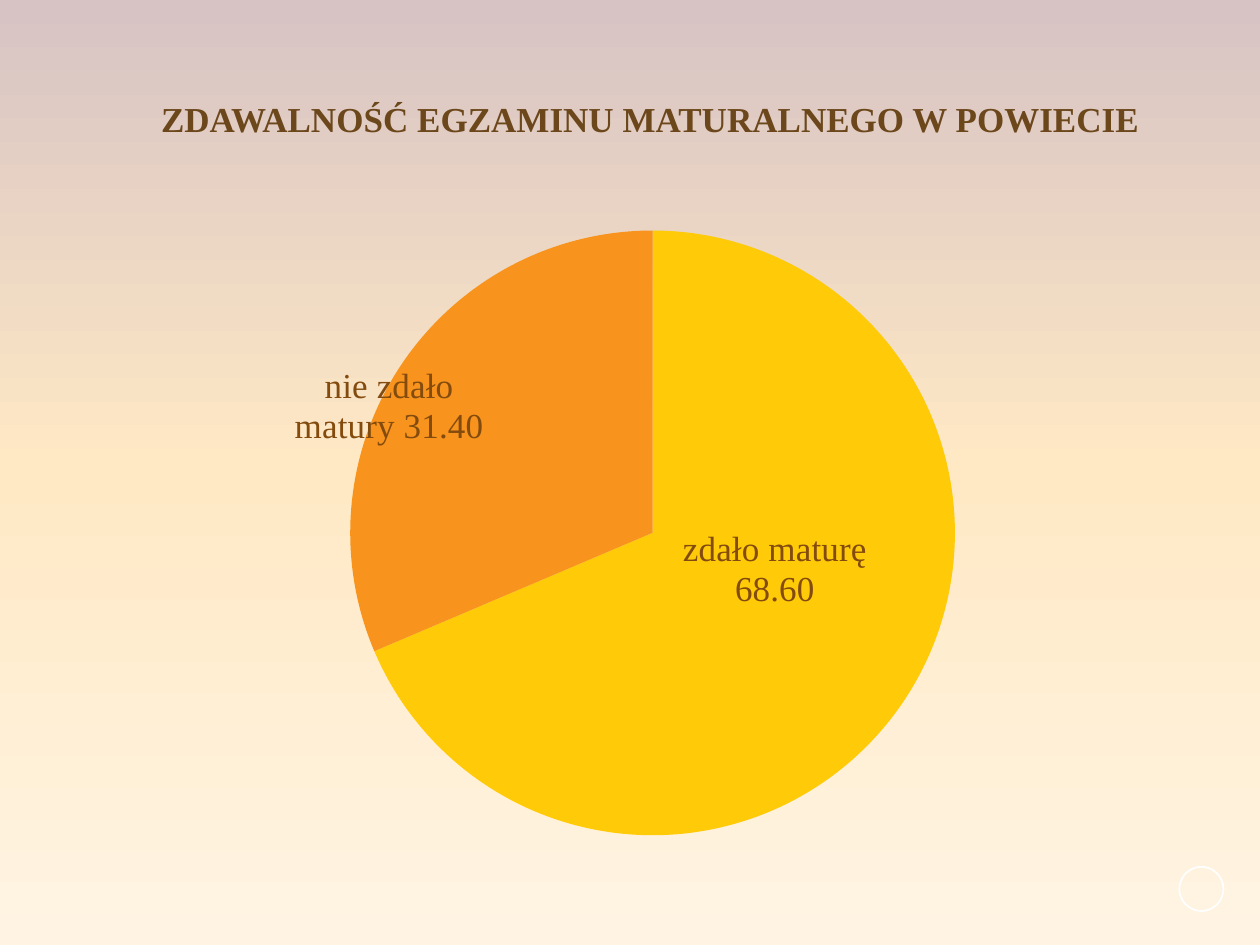
from copy import deepcopy

from pptx import Presentation
from pptx.chart.data import CategoryChartData
from pptx.dml.color import RGBColor
from pptx.enum.chart import XL_CHART_TYPE, XL_LABEL_POSITION
from pptx.enum.shapes import MSO_SHAPE
from pptx.enum.text import MSO_ANCHOR, PP_ALIGN
from pptx.oxml import parse_xml
from pptx.oxml.ns import nsdecls
from pptx.util import Inches, Pt

BACKGROUND = [(0, "D7C3C3"), (0.5, "FFE9C5"), (1, "FFF4E3")]
TITLE_FORMAT = {"name": "Times New Roman", "size": Pt(20), "bold": True}
LABEL_FORMAT = {"name": "Times New Roman", "size": Pt(20), "bold": False}
CHART_LEFT, CHART_TOP, CHART_WIDTH, CHART_HEIGHT = 1.06, 1.55, 8.19, 5.35
PIE_LEFT, PIE_TOP, PIE_DIAMETER = 2.78, 1.83, 4.8
# category, share, colour, label lines, label offset in inches from the slice's middle
RESULTS = [
    ("zdało maturę", 68.6, "FFCA08", ("zdało maturę", "68.60"), (-0.03, -0.37)),
    ("nie zdało matury", 31.4, "F8931D", ("nie zdało", "matury 31.40"), (-1.09, -0.34)),
]


def rgb(value):
    return RGBColor.from_string(value)


def set_all(target, values):
    for name, value in values.items():
        setattr(target, name, value)


def format_font(font, values, color):
    set_all(font, values)
    font.color.rgb = rgb(color)


def paint_background(slide):
    fill = slide.background.fill
    fill.gradient()
    fill.gradient_angle = 270
    stop_list = slide.element.xpath(".//a:gsLst")[0]
    stop_list.append(deepcopy(stop_list[0]))
    for stop, (position, color) in zip(fill.gradient_stops, BACKGROUND):
        stop.position = position
        stop.color.rgb = rgb(color)


def manual_layout(x, y, size=None):
    """Chart layout from inches: an offset, or a fixed square area if size is given."""
    places = {"x": x / CHART_WIDTH, "y": y / CHART_HEIGHT}
    modes = ""
    if size:
        places.update(w=size / CHART_WIDTH, h=size / CHART_HEIGHT)
        modes = '<c:layoutTarget val="inner"/><c:xMode val="edge"/><c:yMode val="edge"/>'
    values = "".join(f'<c:{key} val="{value:.4f}"/>' for key, value in places.items())
    return parse_xml(
        f'<c:layout {nsdecls("c")}><c:manualLayout>{modes}{values}'
        "</c:manualLayout></c:layout>"
    )


def add_page_ring(slide):
    ring = slide.shapes.add_shape(
        MSO_SHAPE.OVAL, Inches(9.36), Inches(6.88), Inches(0.35), Inches(0.35)
    )
    ring.shadow.inherit = False
    ring.fill.background()
    ring.line.color.rgb = rgb("FFFFFF")
    ring.line.width = Pt(1)


def label_slice(point, index, lines, offset):
    label = point.data_label
    frame = label.text_frame
    for number, line in enumerate(lines):
        paragraph = frame.add_paragraph() if number else frame.paragraphs[0]
        run = paragraph.add_run()
        run.text = line
        format_font(run.font, LABEL_FORMAT, "834B0D")
    label.position = XL_LABEL_POSITION.CENTER
    index_element = point._element.xpath(f".//c:dLbl/c:idx[@val='{index}']")[0]
    index_element.addnext(manual_layout(*offset))


def add_results_pie(slide):
    data = CategoryChartData(number_format="0.00")
    data.categories = [result[0] for result in RESULTS]
    data.add_series("Series 1", [result[1] for result in RESULTS])
    bounds = (CHART_LEFT, CHART_TOP, CHART_WIDTH, CHART_HEIGHT)
    chart = slide.shapes.add_chart(XL_CHART_TYPE.PIE, *map(Inches, bounds), data).chart
    chart.has_title = False
    chart.has_legend = False
    format_font(chart.font, {"name": "Cambria", "size": Pt(10)}, "000000")

    plot_area = chart.element.xpath(".//c:plotArea")[0]
    for layout in plot_area.xpath("./c:layout"):
        plot_area.remove(layout)
    pie_corner = (PIE_LEFT - CHART_LEFT, PIE_TOP - CHART_TOP)
    plot_area.insert(0, manual_layout(*pie_corner, PIE_DIAMETER))

    pie = chart.plots[0]
    pie.vary_by_categories = True
    shares = pie.series[0]
    set_all(shares.data_labels, {
        "show_value": True,
        "show_category_name": True,
        "show_percentage": False,
        "number_format": "0.00",
        "number_format_is_linked": False,
        "position": XL_LABEL_POSITION.OUTSIDE_END,
    })
    for index, (_, _, color, lines, offset) in enumerate(RESULTS):
        point = shares.points[index]
        point.format.fill.solid()
        point.format.fill.fore_color.rgb = rgb(color)
        point.format.line.fill.background()
        label_slice(point, index, lines, offset)


def add_title(slide, text):
    frame = slide.shapes.add_textbox(
        Inches(0.66), Inches(0.76), Inches(9), Inches(1.25)
    ).text_frame
    frame.word_wrap = True
    frame.vertical_anchor = MSO_ANCHOR.TOP
    paragraph = frame.paragraphs[0]
    paragraph.alignment = PP_ALIGN.CENTER
    paragraph.line_spacing = 0.9
    run = paragraph.add_run()
    run.text = text
    format_font(run.font, TITLE_FORMAT, "6B471B")


def main():
    presentation = Presentation()
    presentation.slide_width = Inches(10)
    presentation.slide_height = Inches(7.5)
    slide = presentation.slides.add_slide(presentation.slide_layouts[6])
    paint_background(slide)
    add_page_ring(slide)
    add_results_pie(slide)
    add_title(slide, "ZDAWALNOŚĆ EGZAMINU MATURALNEGO W POWIECIE")
    presentation.save("out.pptx")


if __name__ == "__main__":
    main()
